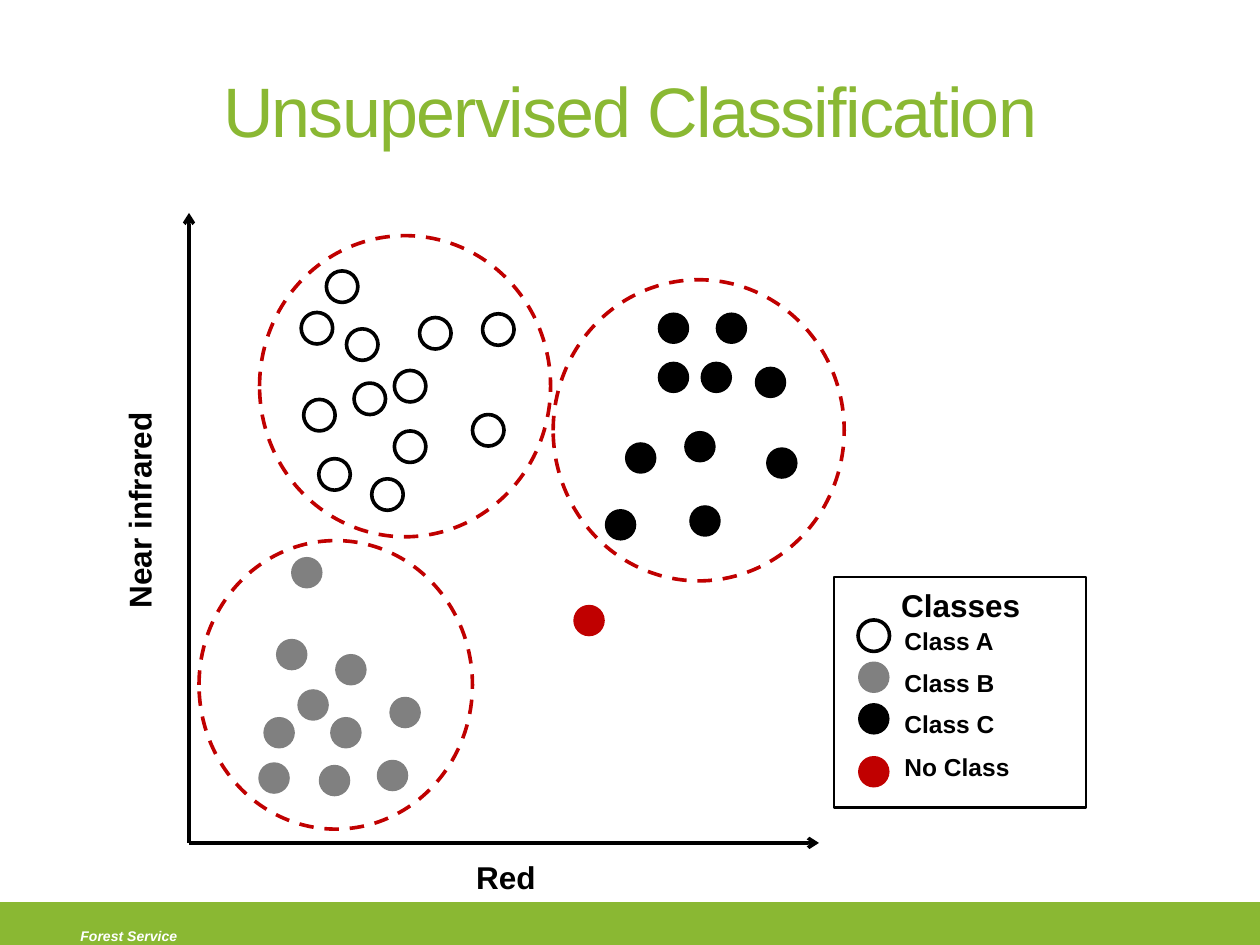
from lxml.etree import SubElement
from pptx import Presentation
from pptx.dml.color import RGBColor
from pptx.enum.dml import MSO_LINE_DASH_STYLE as DASH
from pptx.enum.shapes import MSO_CONNECTOR as CONNECTOR, MSO_SHAPE as SHAPE
from pptx.enum.text import MSO_ANCHOR as ANCHOR, PP_ALIGN as ALIGN
from pptx.oxml.ns import qn
from pptx.util import Inches, Pt

GREEN, BLACK, GRAY, RED, WHITE = "8AB833", "000000", "808080", "C00000", "FFFFFF"
DOT = 0.25
LABEL_WIDTH = 1.77
CLASS_STYLES = {
    "Class A": {"outline": BLACK},
    "Class B": {"fill": GRAY},
    "Class C": {"fill": BLACK},
    "No Class": {"fill": RED},
}
SAMPLES = {
    "Class A": [(1.09, 0.46), (0.89, 0.79), (1.25, 0.92), (1.31, 1.35),
                (1.83, 0.83), (1.03, 1.95), (2.33, 0.8), (1.63, 1.73),
                (0.91, 1.48), (1.63, 1.25), (1.45, 2.11), (2.25, 1.6)],
    "Class B": [(0.59, 4), (0.86, 3.78), (0.69, 3.38), (1.03, 4.38),
                (1.12, 4), (1.16, 3.5), (0.55, 4.36), (1.49, 4.34),
                (0.81, 2.73), (1.59, 3.84)],
    "Class C": [(3.72, 1.18), (3.93, 1.73), (4.49, 1.22), (3.97, 2.32),
                (4.58, 1.86), (3.46, 1.82), (4.06, 1.18), (3.3, 2.35),
                (3.72, 0.79), (4.18, 0.79)],
    "No Class": [(3.05, 3.11)],
}
CLUSTERS = [(0.56, 0.18, 2.31, 2.39), (0.08, 2.6, 2.17, 2.29), (2.89, 0.53, 2.31, 2.39)]
LEGEND_ROWS = {
    "Class A": (0.34, 0.34),
    "Class B": (0.67, 0.67),
    "Class C": (1, 1),
    "No Class": (1.42, 1.34),
}


def color(hex_value):
    return RGBColor.from_string(hex_value)


def add_outline(slide, kind, box, fill=None, outline=None, width=2.08, dash=None):
    shape = slide.shapes.add_shape(kind, *map(Inches, box))
    shape.shadow.inherit = False
    if fill:
        shape.fill.solid()
        shape.fill.fore_color.rgb = color(fill)
    else:
        shape.fill.background()
    if outline:
        shape.line.color.rgb = color(outline)
        shape.line.width = Pt(width)
        if dash:
            shape.line.dash_style = dash
    else:
        shape.line.fill.background()


def add_dot(slide, left, top, class_name):
    add_outline(slide, SHAPE.FLOWCHART_CONNECTOR, (left, top, DOT, DOT),
                **CLASS_STYLES[class_name])


def add_label(slide, box, text, size, ink=BLACK, align=ALIGN.LEFT,
              anchor=ANCHOR.TOP, spacing=None, rotation=0, **styles):
    label = slide.shapes.add_textbox(*map(Inches, box))
    label.rotation = rotation
    frame = label.text_frame
    frame.word_wrap = True
    frame.vertical_anchor = anchor
    paragraph = frame.paragraphs[0]
    paragraph.alignment = align
    run = paragraph.add_run()
    run.text = text
    formats = {"name": "Arial", "size": Pt(size), "bold": True, **styles}
    for attribute, value in formats.items():
        setattr(run.font, attribute, value)
    run.font.color.rgb = color(ink)
    if spacing:
        run.font._element.set("spc", str(spacing * 100))


def add_axis(slide, start, end):
    axis = slide.shapes.add_connector(CONNECTOR.STRAIGHT, *map(Inches, start + end))
    axis.line.color.rgb = color(BLACK)
    axis.line.width = Pt(2)
    SubElement(axis.line._get_or_add_ln(), qn("a:tailEnd"), type="arrow")
    SubElement(axis._element.spPr, qn("a:effectLst"))


def add_footer(slide, left, top, width, height):
    add_outline(slide, SHAPE.RECTANGLE, (left, top, width, height), GREEN, GREEN)
    add_label(slide, (left + 0.54, top + 0.14, 2.04, 0.24), "Forest Service", 8,
              WHITE, italic=True)


def add_title(slide, *box):
    add_label(slide, box, "Unsupervised Classification", 40, GREEN, ALIGN.CENTER,
              ANCHOR.MIDDLE, spacing=-1, bold=False)


def add_plot(slide, left, top, width, height):
    origin = (left, top + height)
    add_axis(slide, origin, (left, top))
    add_axis(slide, origin, (left + width, top + height))
    for class_name, positions in SAMPLES.items():
        for x, y in positions:
            add_dot(slide, left + x, top + y, class_name)
    add_label(slide, (left - 1.28, top + 2.16, LABEL_WIDTH, 0.4), "Near infrared", 18,
              align=ALIGN.CENTER, rotation=270)
    add_label(slide, (left + 1.63, top + height + 0.07, LABEL_WIDTH, 0.4), "Red", 18,
              align=ALIGN.CENTER)
    for x, y, ring_width, ring_height in CLUSTERS:
        add_outline(slide, SHAPE.OVAL, (left + x, top + y, ring_width, ring_height),
                    outline=RED, dash=DASH.DASH)


def add_legend(slide, left, top, width, height):
    add_outline(slide, SHAPE.RECTANGLE, (left, top, width, height),
                outline=BLACK, width=1.5)
    add_label(slide, (left + 0.12, top + 0.02, LABEL_WIDTH, 0.4), "Classes", 18,
              align=ALIGN.CENTER)
    for class_name, (dot_y, text_y) in LEGEND_ROWS.items():
        add_dot(slide, left + 0.19, top + dot_y, class_name)
        add_label(slide, (left + 0.46, top + text_y, LABEL_WIDTH, 0.34), class_name, 14)


def main():
    deck = Presentation()
    deck.slide_width, deck.slide_height = Inches(10), Inches(7.5)
    slide = deck.slides.add_slide(deck.slide_layouts[6])
    add_footer(slide, 0, 7.17, 10, 0.36)
    add_title(slide, 0.5, 0.33, 9, 1.08)
    add_plot(slide, 1.5, 1.69, 5, 5)
    add_legend(slide, 6.62, 4.58, 2, 1.83)
    deck.save("out.pptx")


if __name__ == "__main__":
    main()
